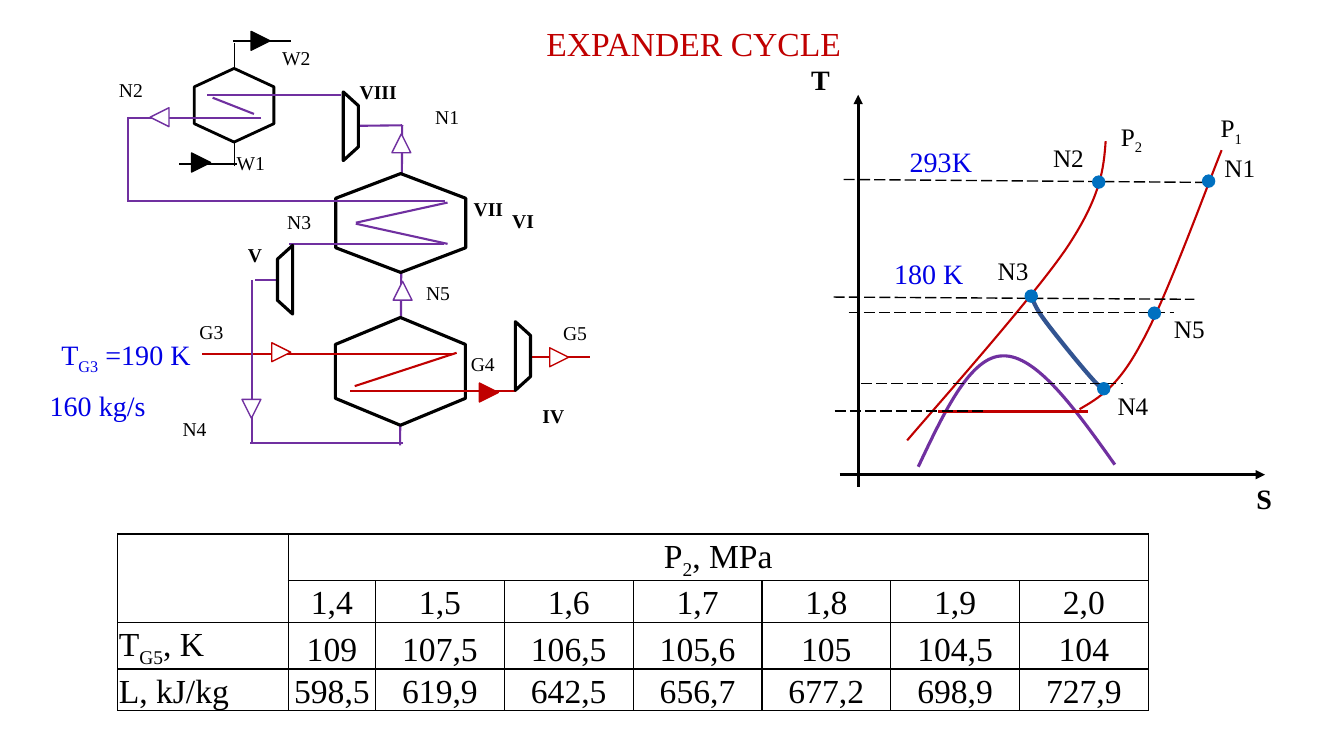
import pptx
import pptx.dml.color
import pptx.enum.dml
import pptx.enum.shapes
import pptx.enum.text
import pptx.oxml.ns
import pptx.util
from lxml import etree

Pt = pptx.util.Pt
qn = pptx.oxml.ns.qn
PRESET = pptx.enum.shapes.MSO_SHAPE
ALIGN = pptx.enum.text.PP_ALIGN

THEME = {
    "font": "Times New Roman",
    "black": "000000", "white": "FFFFFF", "red": "C00000", "purple": "7030A0",
    "blue": "0101E5", "navy": "325491", "dot": "0070C0",
    "table_size": 24,
    # label style: size, bold, colour, alignment, box width, box height, line spacing
    "title": (24, False, "red", ALIGN.CENTER, 894, 36, 1),
    "value": (20, False, "blue", ALIGN.CENTER, 130, 31, 1.07),
    "axis": (20, True, "black", ALIGN.CENTER, 40, 31.5, 1),
    "state": (18, False, "black", ALIGN.CENTER, 50, 29, 1),
    "stream": (14, False, "black", ALIGN.LEFT, 60, 31, 1.07),
    "unit": (14, True, "black", ALIGN.LEFT, 60, 29.5, 1.07),
}

# Runs that start with "_" are subscripts. x is the left edge of left-aligned
# labels and the centre of centred ones; y is the top of the box.
LABELS = {
    "title": [((" EXPANDER CYCLE",), 492.5, 13)],
    "value": [(("160 kg/s",), 69.8, 272.2), (("T", "_G3", " =190 K"), 90, 235.4),
              (("180 K",), 663.5, 177.8), (("293K",), 672.1, 97.9)],
    "axis": [(("Т",), 586.1, 41), (("S",), 902.9, 340.2)],
    "state": [(("Р", "_1"), 879.5, 77), (("Р", "_2"), 808.2, 82.8),
              (("N1",), 885.6, 105.5), (("N2",), 763.2, 97.9), (("N3",), 723.6, 179),
              (("N4",), 809.3, 275), (("N5",), 849.6, 220.3)],
    "stream": [(("W1",), 162, 103), (("W2",), 194.4, 28.1), (("N1",), 303.8, 70),
               (("N2",), 77.8, 51.1), (("N3",), 198, 145.4), (("N4",), 123.3, 293),
               (("N5",), 297.2, 195.8), (("G3",), 135.4, 223.9), (("G4",), 329.2, 246.5),
               (("G5",), 395.1, 224.2)],
    "unit": [(("IV",), 380.4, 283.7), (("V",), 169.9, 168.5), (("VI",), 358.8, 144.7),
             (("VII",), 331.2, 135.6), (("VIII",), 249.8, 52.6)],
}

# Lines: colour, width, segments (x1, y1, x2, y2)
RISERS = [
    ("black", 1, [(167.6, 118.8, 167.6, 31)]),
    ("purple", 1.5, [(285.8, 318.2, 287.3, 89.3)]),
]
PIPES = [
    ("red", 1.5, [(421.2, 254.9, 378, 254.9), (368.6, 279.4, 249.8, 279.4),
                  (253.4, 275.8, 326.2, 252), (322.6, 252.7, 144, 252.7)]),
    ("purple", 1.5, [(254.2, 159.8, 319.7, 174.2), (254.2, 159.1, 319.7, 144.7),
                     (318.2, 143.7, 90.7, 143.7), (316.8, 174.4, 206.6, 174.4),
                     (208.8, 200.2, 182.2, 200.2), (180, 200.2, 180, 316.8),
                     (288, 316.5, 178.6, 316.5), (287.3, 89.5, 244.8, 90),
                     (243.4, 67.7, 147.6, 67.7), (186.5, 84.2, 90.7, 84.2),
                     (151.9, 69.8, 181.4, 81.4), (91.4, 83.5, 91.4, 144)]),
    ("black", 1, [(166.3, 29.4, 208.1, 29.4), (128.2, 117.2, 169.2, 117.2)]),
]
AXES = [("black", 2.25, [(613, 347.8, 613, 67.7), (599.8, 339.1, 903.6, 339.1)])]
CONDENSATION = [("red", 2, [(670.3, 293.8, 776.9, 293.8)])]
ISOTHERMS = [("black", 1, [(596.2, 293.6, 702.7, 293.6), (602.6, 128.2, 860.4, 130.3),
                           (614.9, 274.1, 802.1, 274.1), (595.4, 212.2, 853.2, 213.8),
                           (606.2, 223.4, 838.8, 223.4)])]

# Shapes: centre x, centre y, width, height, rotation, line width
EXCHANGERS = [(167.2, 75.2, 52.6, 56.9, 90, 2), (286, 265.3, 77, 92.9, 90, 2.25),
              (286.2, 159.3, 70.6, 92.9, 90, 2.25)]
EXPANDERS = [(373.5, 254.3, 49, 10.8, 270, 2.25), (250.6, 90.2, 49, 10.8, 270, 2.25),
             (203.6, 199.8, 49, 10.8, 90, 2.25)]
# Flow marks: centre x, centre y, rotation, fill, line
FLOW_MARKS = [
    (349.2, 280.4, 90, "red", "red"), (200.9, 251.6, 90, "white", "red"),
    (399.4, 255.2, 90, "white", "red"), (179.6, 292, 180, "white", "purple"),
    (287.6, 207.7, 0, "white", "purple"), (286.7, 102.4, 0, "white", "purple"),
    (114, 83.7, 270, "white", "purple"), (186.1, 29.2, 90, "black", "black"),
    (143.6, 116.1, 90, "black", "black"),
]
STATE_DOTS = [(863.3, 129.4), (784.8, 130.1), (736.6, 211.5), (788.4, 277.7), (824.6, 223.7)]

# Curves: colour, width, start followed by two Bezier pieces of three points
CURVES = [
    ("purple", 2.25, [(655.9, 333.4), (674.6, 293.8), (693.4, 254.2), (716.4, 254.2),
                      (740.2, 253.4), (768.2, 292.3), (796.3, 331.9)]),
    ("red", 1.5, [(789.8, 100.8), (788.4, 121), (786.2, 140.4), (762.5, 176.4),
                  (738.7, 211.7), (668.2, 290.9), (648, 314.6)]),
    ("navy", 3, [(736.6, 208.8), (737.3, 213.8), (738.7, 218.9), (747.4, 230.4),
                 (756, 241.9), (788.4, 282.2), (788.4, 277.9)]),
    ("red", 1.5, [(771.1, 292.3), (784.8, 284.4), (798.5, 276.5), (815, 245.5),
                  (832.3, 215.3), (862.6, 131.8), (872.6, 107.3)]),
]

TABLE_HEAD = ("P", "_2", ", MPa")
TABLE_ROWS = [
    [(), "1,4", "1,5", "1,6", "1,7", "1,8", "1,9", "2,0"],
    [("T", "_G5", ", K"), "109", "107,5", "106,5", "105,6", "105", "104,5", "104"],
    [("L, kJ/kg",), "598,5", "619,9", "642,5", "656,7", "677,2", "698,9", "727,9"],
]
TABLE_LEFT, TABLE_TOP, TABLE_HEIGHT = 84.2, 381.4, 117.4
COLUMN_WIDTHS = [121.7, 62.4] + [92] * 6
ROW_HEIGHT = 14.4  # rows grow to fit their text


def color(name):
    return pptx.dml.color.RGBColor.from_string(THEME[name])


def add_runs(paragraph, texts, size, bold=False, ink="black"):
    for text in texts:
        run = paragraph.add_run()
        run.text = text.removeprefix("_")
        run.font.name, run.font.size, run.font.bold = THEME["font"], Pt(size), bold
        run.font.color.rgb = color(ink)
        if text.startswith("_"):
            run._r.get_or_add_rPr().set("baseline", "-25000")


def add_label(slide, style, texts, x, top):
    size, bold, ink, alignment, width, height, spacing = THEME[style]
    left = x - width / 2 if alignment == ALIGN.CENTER else x
    frame = slide.shapes.add_textbox(Pt(left), Pt(top), Pt(width), Pt(height)).text_frame
    frame.word_wrap = True
    paragraph = frame.paragraphs[0]
    paragraph.alignment, paragraph.line_spacing = alignment, spacing
    add_runs(paragraph, texts, size, bold, ink)


def set_line(line, ink, width):
    line.color.rgb, line.width = color(ink), Pt(width)


def add_lines(slide, groups, dashed=False, arrow=False):
    for ink, width, segments in groups:
        for segment in segments:
            connector = slide.shapes.add_connector(
                pptx.enum.shapes.MSO_CONNECTOR.STRAIGHT, *map(Pt, segment))
            set_line(connector.line, ink, width)
            if dashed:
                connector.line.dash_style = pptx.enum.dml.MSO_LINE.LONG_DASH
            if arrow:
                etree.SubElement(connector.line._get_or_add_ln(), qn("a:tailEnd"),
                                 type="triangle")
            etree.SubElement(connector._element.spPr, qn("a:effectLst"))


def add_centred(slide, preset, x, y, width, height, rotation, line_width,
                fill="white", ink="black"):
    shape = slide.shapes.add_shape(
        preset, Pt(x - width / 2), Pt(y - height / 2), Pt(width), Pt(height))
    shape.rotation = rotation
    shape.shadow.inherit = False
    shape.fill.solid()
    shape.fill.fore_color.rgb = color(fill)
    set_line(shape.line, ink, line_width)


def add_curve(slide, ink, width, points):
    """Draw joined cubic Bezier pieces: a freeform whose segments are made curved."""
    points = [(Pt(x), Pt(y)) for x, y in points]
    builder = slide.shapes.build_freeform(*points[0])
    builder.add_line_segments(points[3::3], close=False)
    curve = builder.convert_to_shape()
    segments = list(curve._element.iter(qn("a:lnTo")))
    for index, segment in enumerate(segments):
        bezier = etree.Element(qn("a:cubicBezTo"))
        for x, y in points[3 * index + 1:3 * index + 4]:
            etree.SubElement(bezier, qn("a:pt"), x=str(x - curve.left), y=str(y - curve.top))
        segment.getparent().replace(segment, bezier)
    curve.shadow.inherit = False
    curve.fill.background()
    set_line(curve.line, ink, width)


def style_cell(cell):
    cell.fill.solid()
    cell.fill.fore_color.rgb = color("white")
    cell.margin_left = cell.margin_right = cell.margin_top = Pt(0.7)
    cell.margin_bottom = Pt(0)
    cell.vertical_anchor = pptx.enum.text.MSO_ANCHOR.BOTTOM
    properties = cell._tc.get_or_add_tcPr()
    for index, side in enumerate(("lnL", "lnR", "lnT", "lnB")):
        border = etree.Element(qn(f"a:{side}"), w=str(Pt(1)))
        fill = etree.SubElement(border, qn("a:solidFill"))
        etree.SubElement(fill, qn("a:srgbClr"), val=THEME["black"])
        properties.insert(index, border)


def add_results_table(slide):
    frame = slide.shapes.add_table(
        len(TABLE_ROWS) + 1, len(COLUMN_WIDTHS), Pt(TABLE_LEFT), Pt(TABLE_TOP),
        Pt(sum(COLUMN_WIDTHS)), Pt(TABLE_HEIGHT))
    table = frame.table
    table.first_row = table.horz_banding = False
    for column, width in zip(table.columns, COLUMN_WIDTHS):
        column.width = Pt(width)
    for row in table.rows:
        row.height = Pt(ROW_HEIGHT)
    frame.height = Pt(TABLE_HEIGHT)
    for cell in table.iter_cells():
        style_cell(cell)
    table.cell(0, 0).merge(table.cell(1, 0))
    table.cell(0, 1).merge(table.cell(0, len(COLUMN_WIDTHS) - 1))
    entries = [(0, 1, TABLE_HEAD)]
    for row, (name, *values) in enumerate(TABLE_ROWS, 1):
        entries += [(row, 0, name)] if name else []
        entries += [(row, column, (value,)) for column, value in enumerate(values, 1)]
    for row, column, texts in entries:
        paragraph = table.cell(row, column).text_frame.paragraphs[0]
        paragraph.alignment = ALIGN.CENTER if column else ALIGN.LEFT
        add_runs(paragraph, texts, THEME["table_size"])


def main():
    presentation = pptx.Presentation()
    presentation.slide_width, presentation.slide_height = Pt(960), Pt(540)
    slide = presentation.slides.add_slide(presentation.slide_layouts[6])

    add_lines(slide, RISERS)
    for exchanger in EXCHANGERS:
        add_centred(slide, PRESET.HEXAGON, *exchanger)
    add_lines(slide, PIPES)
    for expander in EXPANDERS:
        add_centred(slide, PRESET.FLOWCHART_MANUAL_OPERATION, *expander)
    for x, y, rotation, fill, ink in FLOW_MARKS:
        add_centred(slide, PRESET.ISOSCELES_TRIANGLE, x, y, 13.5, 13.5, rotation, 1, fill, ink)

    add_lines(slide, AXES, arrow=True)
    for curve in CURVES:
        add_curve(slide, *curve)
    add_lines(slide, CONDENSATION)
    add_lines(slide, ISOTHERMS, dashed=True)
    for x, y in STATE_DOTS:
        add_centred(slide, PRESET.OVAL, x, y, 8.6, 8.6, 0, 1, "dot", "dot")

    for style, labels in LABELS.items():
        for label in labels:
            add_label(slide, style, *label)
    add_results_table(slide)
    presentation.save("out.pptx")


if __name__ == "__main__":
    main()
